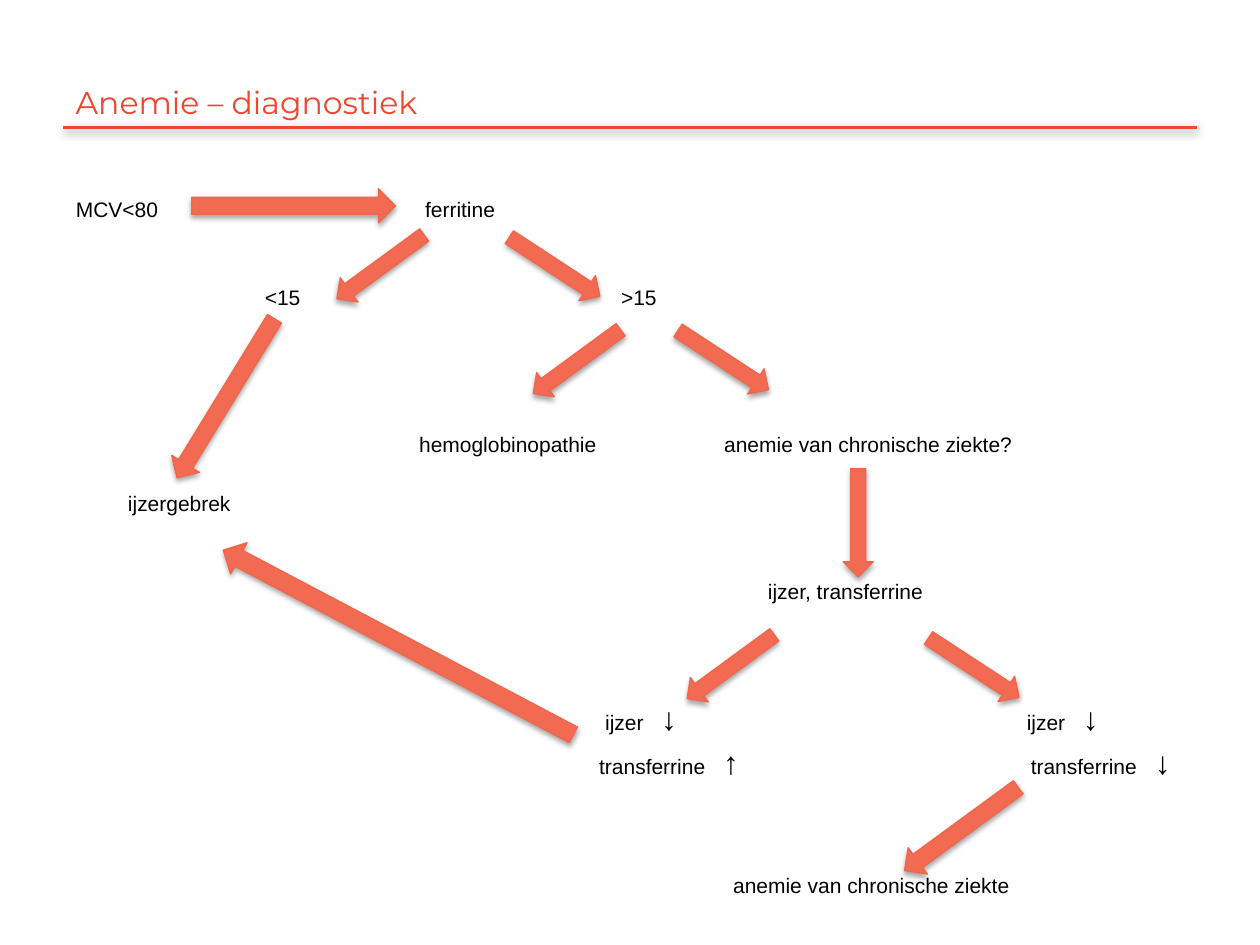
"""Build the decision tree slide for diagnosing anaemia."""
from lxml import etree
from pptx import Presentation, util as u
from pptx.dml.color import RGBColor
from pptx.enum import shapes, text
from pptx.oxml.ns import qn

Cm, Pt = u.Cm, u.Pt
HUES = {"title": "EF4630", "fill": "F26A51", "edge": "F1654B", "ink": "000000"}


def shade(item, alpha, blur, dist):
    """Give a shape or connector a soft shadow straight below it."""
    fx = etree.SubElement(item._element.spPr, qn("a:effectLst"))
    cast = etree.SubElement(fx, qn("a:outerShdw"), blurRad=str(Pt(blur)),
                            dist=str(Pt(dist)), dir="5400000", rotWithShape="0")
    tint = etree.SubElement(cast, qn("a:srgbClr"), val=HUES["ink"])
    etree.SubElement(tint, qn("a:alpha"), val=str(alpha * 1000))


def write(para, words, size, face, hue):
    """Add one formatted run to a paragraph."""
    run = para.add_run()
    run.text = words
    run.font.size, run.font.name = Pt(size), face
    run.font.color.rgb = RGBColor.from_string(HUES[hue])


deck = Presentation()
deck.slide_width, deck.slide_height = Cm(25.4), Cm(19.05)
slide = deck.slides.add_slide(deck.slide_layouts[5])

rule = slide.shapes.add_connector(shapes.MSO_CONNECTOR.STRAIGHT,
                                  Cm(1.27), Cm(2.57), Cm(24.13), Cm(2.57))
rule.line.color.rgb = RGBColor.from_string(HUES["title"])
rule.line.width = Pt(2)
shade(rule, 38, 5, 1.6)

title = slide.shapes.title
title.left, title.top, title.width, title.height = Cm(1.27), Cm(0.76), Cm(22.86), Cm(1.8)
title.text_frame.vertical_anchor = text.MSO_ANCHOR.BOTTOM
head = title.text_frame.paragraphs[0]
head.alignment = text.PP_ALIGN.LEFT
write(head, "Anemie – diagnostiek", 18, "Montserrat", "title")

# label, left, middle, arrow sign, tab stop
labels = [
    ("MCV<80", 1.53, 4.21, "", 0),
    ("ferritine", 8.57, 4.21, "", 0),
    ("<15", 5.34, 5.99, "", 0),
    (">15", 12.52, 5.99, "", 0),
    ("hemoglobinopathie", 8.45, 8.95, "", 0),
    ("anemie van chronische ziekte?", 14.6, 8.95, "", 0),
    ("ijzergebrek", 2.58, 10.14, "", 0),
    ("ijzer, transferrine", 15.48, 11.91, "", 0),
    ("ijzer", 12.2, 14.47, "↓", 1.13),
    ("ijzer", 20.7, 14.47, "↓", 1.13),
    ("transferrine", 12.08, 15.36, "↑", 2.5),
    ("transferrine", 20.78, 15.36, "↓", 2.5),
    ("anemie van chronische ziekte", 14.78, 17.84, "", 0),
]
for words, left, mid, sign, stop in labels:
    wide = 6.2 if len(words) > 20 else 4.4
    box = slide.shapes.add_textbox(Cm(left), Cm(mid - 0.4), Cm(wide), Cm(0.8))
    frame = box.text_frame
    frame.word_wrap = True
    frame.vertical_anchor = text.MSO_ANCHOR.MIDDLE
    frame.margin_left = frame.margin_right = frame.margin_top = frame.margin_bottom = 0
    para = frame.paragraphs[0]
    if sign:
        tabs = etree.SubElement(para._p.get_or_add_pPr(), qn("a:tabLst"))
        etree.SubElement(tabs, qn("a:tab"), pos=str(Cm(stop)), algn="l")
        write(para, words + "\t", 12, "Arial", "ink")
        write(para, sign, 18, "Arial", "ink")
    else:
        write(para, words, 12, "Arial", "ink")

SHORT, DOWN, BACK = (2.18, 0.61), 33.2, 143.8
arrows = [
    (5.92, 4.15, (4.11, 0.69), 0),
    (7.67, 5.38, SHORT, BACK),
    (11.18, 5.38, SHORT, DOWN),
    (11.63, 7.29, SHORT, BACK),
    (14.58, 7.26, SHORT, DOWN),
    (17.3, 10.54, SHORT, 90),
    (14.73, 13.44, SHORT, BACK),
    (19.63, 13.46, SHORT, DOWN),
    (19.38, 16.71, (2.84, 0.66), BACK),
    (8.03, 12.95, (7.98, 0.71), 207.8),
    (4.55, 8.03, (3.76, 0.66), 121.5),
]
for mid_x, mid_y, (wide, high), turn in arrows:
    arrow = slide.shapes.add_shape(shapes.MSO_SHAPE.RIGHT_ARROW, Cm(mid_x - wide / 2),
                                   Cm(mid_y - high / 2), Cm(wide), Cm(high))
    arrow.rotation = turn
    arrow.fill.solid()
    arrow.fill.fore_color.rgb = RGBColor.from_string(HUES["fill"])
    arrow.line.color.rgb = RGBColor.from_string(HUES["edge"])
    arrow.line.width = Pt(0.75)
    shade(arrow, 35, 3.1, 1.8)

deck.save("out.pptx")
